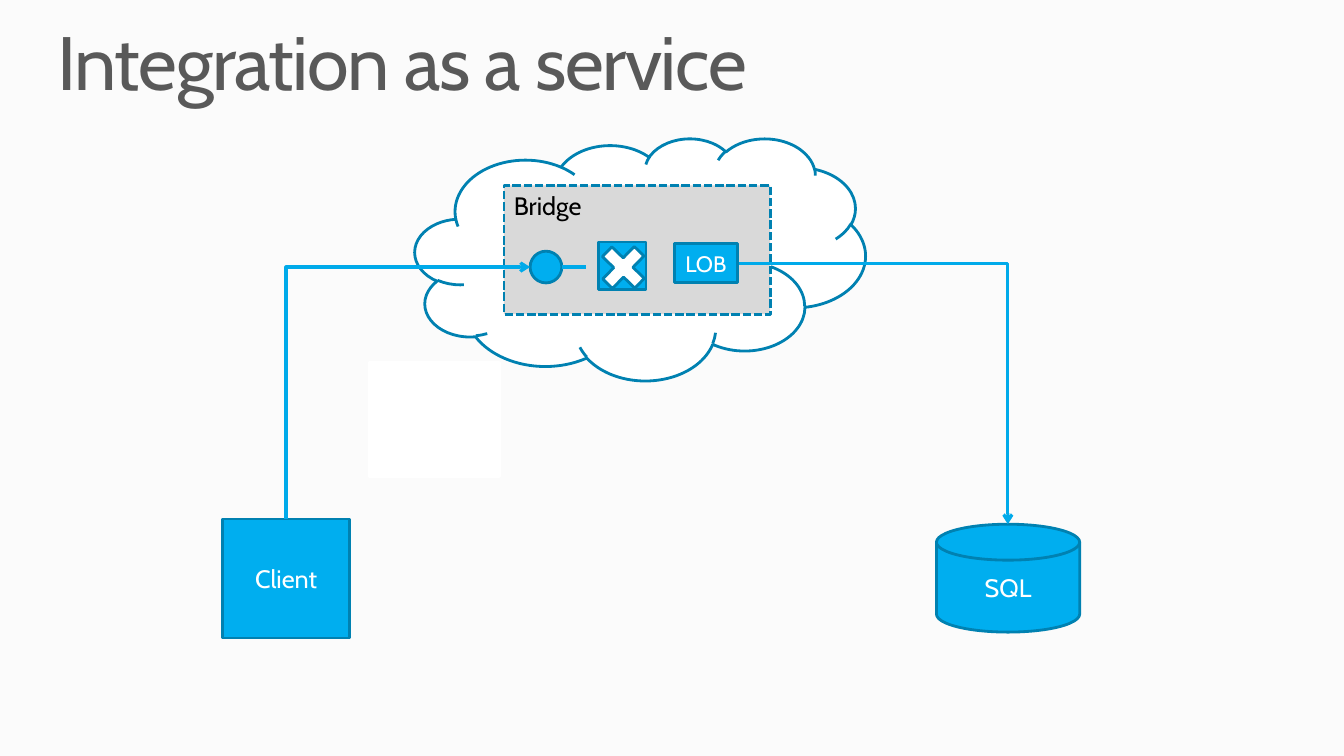
from dataclasses import dataclass

from lxml.etree import SubElement
from pptx import Presentation
from pptx.dml.color import RGBColor
from pptx.enum.dml import MSO_LINE
from pptx.enum.shapes import MSO_CONNECTOR, MSO_SHAPE
from pptx.enum.text import MSO_ANCHOR, PP_ALIGN
from pptx.oxml.ns import qn
from pptx.slide import Slide
from pptx.text.text import TextFrame
from pptx.util import Cm, Pt

FONT = "Cabin"
BLUE = "00AEEF"
DARK_BLUE = "0081B1"
LINE_BLUE = "00AAEA"
WHITE = "FFFFFF"
GREY = "D9D9D9"


@dataclass
class Node:
    """A preset shape; lengths are centimetres."""
    kind: MSO_SHAPE
    left: float
    top: float
    width: float
    height: float
    fill: str = BLUE
    outline: str = DARK_BLUE
    text: str = ""
    size: float = 18
    dashed: bool = False
    rotation: float = 0
    adjustments: tuple[float, ...] = ()


@dataclass
class Link:
    """A connector; lengths are centimetres, arrow_end is headEnd or tailEnd."""
    start: tuple[float, float]
    end: tuple[float, float]
    weight: float = 2.25
    bent: bool = True
    arrow_end: str = ""


BACK_NODES = [
    Node(MSO_SHAPE.RECTANGLE, 5.61, 13.08, 3.2, 3, text="Client"),
    Node(MSO_SHAPE.FLOWCHART_MAGNETIC_DISK, 23.6, 13.21, 3.61, 2.72, text="SQL"),
    Node(MSO_SHAPE.CLOUD_CALLOUT, 10.46, 3.48, 11.35, 6.1, WHITE,
         adjustments=(-0.55, 0.8)),
    Node(MSO_SHAPE.RECTANGLE, 9.3, 9.14, 3.3, 2.87, WHITE, WHITE),
    Node(MSO_SHAPE.RECTANGLE, 12.7, 4.67, 6.71, 3.25, GREY, dashed=True),
    Node(MSO_SHAPE.OVAL, 13.36, 6.33, 0.8, 0.8),
]
LINKS = [
    Link((14.17, 6.73), (14.76, 6.73), weight=3, bent=False),
    Link((18.59, 6.63), (25.4, 13.21), arrow_end="tailEnd"),
    Link((13.36, 6.73), (7.21, 13.08), arrow_end="headEnd"),
]
FRONT_NODES = [
    Node(MSO_SHAPE.RECTANGLE, 16.99, 6.13, 1.6, 1, text="LOB", size=16),
    Node(MSO_SHAPE.RECTANGLE, 15.09, 6.1, 1.19, 1.19),
    Node(MSO_SHAPE.CROSS, 15.14, 6.17, 1.14, 1.14, WHITE,
         rotation=314.1, adjustments=(0.35,)),
]


def color(value: str) -> RGBColor:
    return RGBColor.from_string(value)


def add_text(frame: TextFrame, text: str, size: float, text_color: str,
             align: PP_ALIGN = PP_ALIGN.LEFT, spacing: int = 0) -> None:
    """Add one run; spacing is in hundredths of a point."""
    paragraph = frame.paragraphs[0]
    paragraph.alignment = align
    run = paragraph.add_run()
    run.text = text
    run.font.name = FONT
    run.font.size = Pt(size)
    run.font.color.rgb = color(text_color)
    if spacing:
        run.font._element.set("spc", str(spacing))


def add_node(slide: Slide, node: Node) -> None:
    shape = slide.shapes.add_shape(node.kind, Cm(node.left), Cm(node.top),
                                   Cm(node.width), Cm(node.height))
    shape.shadow.inherit = False
    shape.rotation = node.rotation
    for index, value in enumerate(node.adjustments):
        shape.adjustments[index] = value
    shape.fill.solid()
    shape.fill.fore_color.rgb = color(node.fill)
    shape.line.color.rgb = color(node.outline)
    shape.line.width = Pt(2)
    if node.dashed:
        shape.line.dash_style = MSO_LINE.SQUARE_DOT
    if node.text:
        shape.text_frame.vertical_anchor = MSO_ANCHOR.MIDDLE
        shape.text_frame.word_wrap = len(node.text) > 3
        add_text(shape.text_frame, node.text, node.size, WHITE, PP_ALIGN.CENTER)


def add_link(slide: Slide, link: Link) -> None:
    kind = MSO_CONNECTOR.ELBOW if link.bent else MSO_CONNECTOR.STRAIGHT
    connector = slide.shapes.add_connector(
        kind, *(Cm(value) for value in link.start + link.end))
    connector.line.color.rgb = color(LINE_BLUE)
    connector.line.width = Pt(link.weight)
    properties = connector._element.spPr
    if link.bent:
        properties.find(qn("a:prstGeom")).set("prst", "bentConnector2")
    if link.arrow_end:
        SubElement(properties.find(qn("a:ln")), qn(f"a:{link.arrow_end}"), type="arrow")
    SubElement(properties, qn("a:effectLst"))


def add_title(slide: Slide) -> None:
    box = slide.shapes.add_textbox(Cm(1.45), Cm(0.64), Cm(30.96), Cm(2.08))
    frame = box.text_frame
    frame.word_wrap = True
    frame.margin_left = frame.margin_right = frame.margin_top = frame.margin_bottom = 0
    frame.paragraphs[0].line_spacing = 0.9
    add_text(frame, "Integration as a service", 54, "595959", spacing=-100)


def add_bridge_label(slide: Slide) -> None:
    box = slide.shapes.add_textbox(Cm(12.7), Cm(4.67), Cm(2.36), Cm(1.02))
    box.text_frame.word_wrap = False
    add_text(box.text_frame, "Bridge", 18, "000000")


def main() -> None:
    presentation = Presentation()
    presentation.slide_width = Cm(33.87)
    presentation.slide_height = Cm(19.05)
    slide = presentation.slides.add_slide(presentation.slide_layouts[6])
    slide.background.fill.solid()
    slide.background.fill.fore_color.rgb = color("FBFBFB")

    add_title(slide)
    for node in BACK_NODES:
        add_node(slide, node)
    add_bridge_label(slide)
    for link in LINKS:
        add_link(slide, link)
    for node in FRONT_NODES:
        add_node(slide, node)
    presentation.save("out.pptx")


if __name__ == "__main__":
    main()
